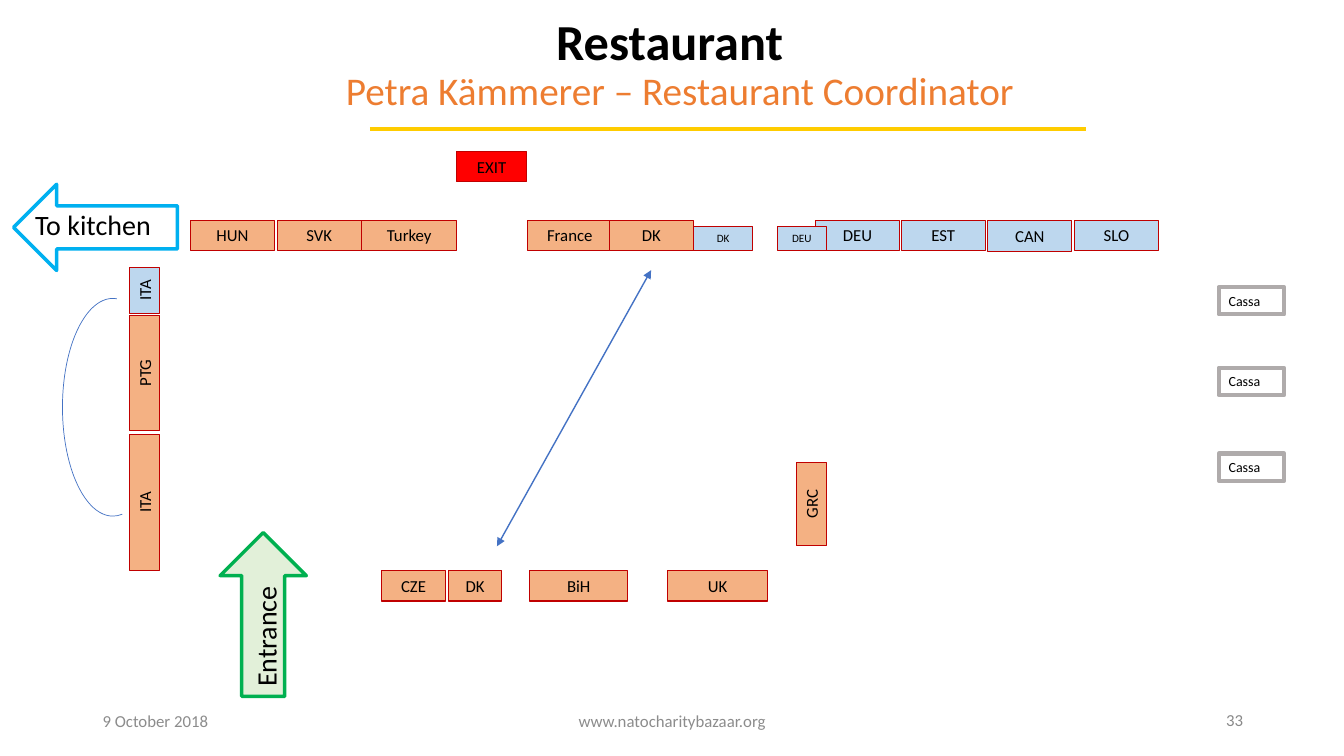
from pptx import Presentation
from pptx.dml.color import RGBColor
from pptx.enum.shapes import MSO_CONNECTOR, MSO_SHAPE
from pptx.enum.text import MSO_ANCHOR, MSO_AUTO_SIZE, PP_ALIGN
from pptx.oxml.ns import qn
from pptx.util import Pt
from lxml.etree import SubElement

color = RGBColor.from_string
ORANGE, BLUE = "F4B183", "BDD7EE"
STALL_LINE, ARROW_BLUE = "C00000", "4472C4"
STALL_HEIGHT, SMALL_HEIGHT = 21.8, 17.2

deck = Presentation()
deck.slide_width, deck.slide_height = Pt(960), Pt(540)
page = deck.slides.add_slide(deck.slide_layouts[5])


def draw(preset, left, top, width, height, fill, line, weight, rotation=0):
    shape = page.shapes.add_shape(preset, Pt(left), Pt(top), Pt(width), Pt(height))
    shape.shadow.inherit = False
    shape.rotation = rotation
    if fill:
        shape.fill.solid()
        shape.fill.fore_color.rgb = color(fill)
    else:
        shape.fill.background()
    shape.line.color.rgb = color(line)
    shape.line.width = Pt(weight)
    return shape


def write(shape, text, size, align=PP_ALIGN.CENTER, anchor=MSO_ANCHOR.TOP, ink="000000"):
    frame = shape.text_frame
    frame.word_wrap = True
    frame.vertical_anchor = anchor
    para = frame.paragraphs[0]
    para.text = text
    para.alignment = align
    para.font.name = "Calibri"
    para.font.size = Pt(size)
    para.font.color.rgb = color(ink)


# Title with coordinator line
title = page.shapes.title
title.left, title.top, title.width, title.height = Pt(122.4), Pt(16.6), Pt(720), Pt(68.4)
frame = title.text_frame
frame.auto_size = MSO_AUTO_SIZE.NONE
frame.vertical_anchor = MSO_ANCHOR.BOTTOM
para = frame.paragraphs[0]
para.alignment = PP_ALIGN.CENTER
para.line_spacing = 0.9
para.font.name = "Calibri"
for text, size, bold, ink in [
    ("Restaurant ", 36, True, "000000"),
    (" Petra Kämmerer – Restaurant Coordinator", 28, False, "ED7D31"),
]:
    if para.runs:
        para.add_line_break()
    span = para.add_run()
    span.text = text
    span.font.size = Pt(size)
    span.font.bold = bold
    span.font.color.rgb = color(ink)

# Footer: date, web address, page number
for text, left, top, width, align, ink in [
    ("9 October 2018", 66.2, 500.4, 216, PP_ALIGN.LEFT, "8C8C8C"),
    ("www.natocharitybazaar.org", 318.2, 500.4, 324, PP_ALIGN.CENTER, "8C8C8C"),
    ("33", 679, 499.7, 216, PP_ALIGN.RIGHT, "898989"),
]:
    box = page.shapes.add_textbox(Pt(left), Pt(top), Pt(width), Pt(28.8))
    write(box, text, 12, align, MSO_ANCHOR.MIDDLE, ink)

# Stalls along the top and bottom walls, and the exit
for label, left, top, width, fill in [
    ("HUN", 136.1, 157.2, 60, ORANGE),
    ("SVK", 198, 157.2, 60, ORANGE),
    ("Turkey", 258.5, 157.2, 67.7, ORANGE),
    ("France", 377, 157.2, 60, ORANGE),
    ("DK", 435.2, 157.2, 60, ORANGE),
    ("DEU", 582.5, 157.2, 60, BLUE),
    ("EST", 643.7, 157.2, 60, BLUE),
    ("CAN", 705.6, 157.7, 60, BLUE),
    ("SLO", 767.5, 157.2, 60, BLUE),
    ("CZE", 272.6, 407.5, 45.6, ORANGE),
    ("DK", 320.4, 407.5, 38, ORANGE),
    ("BiH", 378.4, 407.5, 70, ORANGE),
    ("UK", 476.6, 407.5, 72, ORANGE),
    ("EXIT", 326.2, 108.2, 49.8, "FF0000"),
]:
    stall = draw(MSO_SHAPE.RECTANGLE, left, top, width, STALL_HEIGHT, fill, STALL_LINE, 0.75)
    write(stall, label, 12)

# Small side tables
for label, left, width in [("DK", 495.4, 42.4), ("DEU", 555.2, 35.2)]:
    table = draw(MSO_SHAPE.RECTANGLE, left, 161.7, width, SMALL_HEIGHT, BLUE, STALL_LINE, 0.75)
    write(table, label, 8)

# Upright stalls, placed by their centres
for label, center_x, center_y, length, fill in [
    ("ITA", 103.3, 207.5, 33.4, BLUE),
    ("PTG", 103.3, 266.4, 82.8, ORANGE),
    ("ITA", 103.3, 358.8, 96.8, ORANGE),
    ("GRC", 579.6, 360, 59.8, ORANGE),
]:
    stall = draw(MSO_SHAPE.RECTANGLE, center_x - length / 2, center_y - STALL_HEIGHT / 2,
                 length, STALL_HEIGHT, fill, STALL_LINE, 0.75, 270)
    write(stall, label, 12)

# Cash desks
for top in (205.2, 262.8, 324):
    desk = draw(MSO_SHAPE.RECTANGLE, 870.5, top, 46.8, 19.4, None, "AFABAB", 3)
    write(desk, "Cassa", 10, PP_ALIGN.LEFT)

# Kitchen and entrance arrows with their labels
draw(MSO_SHAPE.UP_ARROW, 37.4, 103.9, 61.6, 117, None, "00B0F0", 2.5, 270)
draw(MSO_SHAPE.UP_ARROW, 157.2, 380.4, 61.6, 117, "E2F0D9", "00B050", 2.5)
for label, left, top, width, rotation in [
    ("To kitchen", 18, 144.7, 105.1, 0),
    ("Entrance", 135.4, 427.7, 108.7, 270),
]:
    box = page.shapes.add_textbox(Pt(left), Pt(top), Pt(width), Pt(31.5))
    box.rotation = rotation
    write(box, label, 20, PP_ALIGN.LEFT)

# Title rule and the two-way arrow between the DK stalls
for start_x, start_y, end_x, end_y, ink, weight, heads in [
    (264.2, 92.3, 775.4, 92.3, "FFCC00", 3, ()),
    (465.1, 193, 355, 390.2, ARROW_BLUE, 1, ("a:headEnd", "a:tailEnd")),
]:
    link = page.shapes.add_connector(MSO_CONNECTOR.STRAIGHT, Pt(start_x), Pt(start_y),
                                     Pt(end_x), Pt(end_y))
    link.line.color.rgb = color(ink)
    link.line.width = Pt(weight)
    for head in heads:
        SubElement(link.line._get_or_add_ln(), qn(head), type="triangle")
    SubElement(link._element.spPr, qn("a:effectLst"))

# Arc joining the two ITA stalls
arc = draw(MSO_SHAPE.ARC, 2.9, 254.9, 155.5, 72, None, ARROW_BLUE, 0.5, 270)
arc.adjustments[0] = 104.98
arc.adjustments[1] = 1.29

deck.save("out.pptx")
